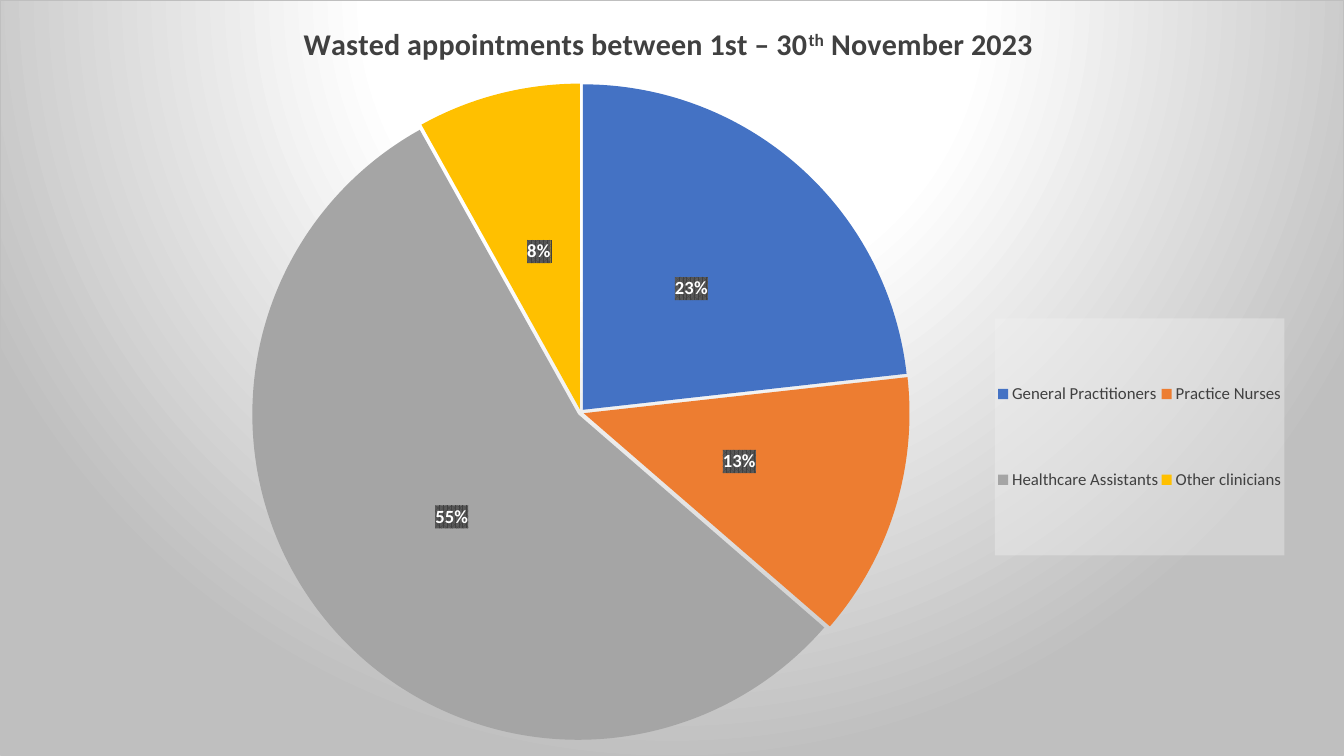
from typing import NamedTuple

from lxml import etree
from pptx import Presentation
from pptx import util as u
from pptx.chart.data import CategoryChartData
from pptx.dml.color import RGBColor
from pptx.enum import chart as ch
from pptx.oxml import parse_xml
from pptx.oxml.ns import nsdecls

FONT = "Calibri"
BLUE = RGBColor(0x44, 0x72, 0xC4)
ORANGE = RGBColor(0xED, 0x7D, 0x31)
GRAY = RGBColor(0xA5, 0xA5, 0xA5)
GOLD = RGBColor(0xFF, 0xC0, 0x00)
WHITE = RGBColor(0xFF, 0xFF, 0xFF)
BLACK = RGBColor(0x00, 0x00, 0x00)
DARK = RGBColor(0x40, 0x40, 0x40)
LABEL_STRIPE = RGBColor(0x59, 0x59, 0x59)
LEGEND_FILL = RGBColor(0xF2, 0xF2, 0xF2)
EDGE = RGBColor(0xBF, 0xBF, 0xBF)


class Staff(NamedTuple):
    group: str
    percent: int
    color: RGBColor


STAFF = [
    Staff("General Practitioners", 23, BLUE),
    Staff("Practice Nurses", 13, ORANGE),
    Staff("Healthcare Assistants", 55, GRAY),
    Staff("Other clinicians", 8, GOLD),
]


def set_font(font, *, size: float, color: RGBColor, bold: bool = False) -> None:
    font.name = FONT
    font.size = u.Pt(size)
    font.bold = bold
    font.color.rgb = color


def add_text(paragraph, content: str, *, raised: bool = False, **style) -> None:
    run = paragraph.add_run()
    run.text = content
    set_font(run.font, **style)
    if raised:
        run._r.get_or_add_rPr().set("baseline", "30000")


def chart_xml(tag: str, inner: str) -> etree.ElementBase:
    return parse_xml(f"<c:{tag} {nsdecls('c', 'a')}>{inner}</c:{tag}>")


def srgb(color: RGBColor, inner: str = "") -> str:
    return f'<a:srgbClr val="{color}">{inner}</a:srgbClr>'


def place(part, index: int, **percents: float) -> None:
    """Set a manual layout, in percent of the chart area."""
    for old in part.xpath("c:layout"):
        part.remove(old)
    modes = '<c:xMode val="edge"/><c:yMode val="edge"/>'
    values = "".join(f'<c:{key} val="{value / 100:.4f}"/>'
                     for key, value in percents.items())
    target = '<c:layoutTarget val="inner"/>' if part.tag.endswith("plotArea") else ""
    part.insert(index, chart_xml(
        "layout", f"<c:manualLayout>{target}{modes}{values}</c:manualLayout>"))


def paint(part, fill: str) -> None:
    """Put shape formatting just ahead of the part's text formatting."""
    part.xpath("c:txPr")[0].addprevious(chart_xml("spPr", fill))


def build_pie(slide, width: int, height: int):
    data = CategoryChartData(number_format='0"%"')
    data.categories = [staff.group for staff in STAFF]
    data.add_series("Series 1", [staff.percent for staff in STAFF])
    chart = slide.shapes.add_chart(
        ch.XL_CHART_TYPE.PIE, 0, 0, width, height, data).chart
    set_font(chart.font, size=10, color=BLACK)
    root = chart.element

    # Chart area: light from above the slide
    stops = "".join(f'<a:gs pos="{pos}000">{srgb(color)}</a:gs>'
                    for pos, color in ((0, WHITE), (39, WHITE), (100, EDGE)))
    paint(root, f'<a:gradFill><a:gsLst>{stops}</a:gsLst><a:path path="circle">'
                '<a:fillToRect l="50000" t="-80000" r="50000" b="180000"/>'
                f'</a:path></a:gradFill><a:ln w="{u.Pt(0.75)}">'
                f'<a:solidFill>{srgb(EDGE)}</a:solidFill></a:ln>')

    # Slices
    plot = chart.plots[0]
    plot.vary_by_categories = True
    slices = plot.series[0]
    for index, staff in enumerate(STAFF):
        fill = slices.points[index].format.fill
        fill.solid()
        fill.fore_color.rgb = staff.color
    root.xpath(".//c:ser/c:tx")[0].addnext(
        parse_xml(f'<c:explosion {nsdecls("c")} val="1"/>'))
    place(root.xpath(".//c:plotArea")[0], 0, x=18.7, y=11, w=49, h=87.1)

    # Percent labels
    labels = slices.data_labels
    set_font(labels.font, size=13.3, color=WHITE, bold=True)
    labels.number_format = '0"%"'
    labels.number_format_is_linked = False
    labels.show_value = True
    labels.position = ch.XL_LABEL_POSITION.CENTER
    paint(root.xpath(".//c:ser/c:dLbls")[0],
          f'<a:pattFill prst="pct75"><a:fgClr>{srgb(DARK)}</a:fgClr>'
          f'<a:bgClr>{srgb(LABEL_STRIPE)}</a:bgClr></a:pattFill>')
    return chart


def add_heading(chart) -> None:
    chart.has_title = True
    heading = chart.chart_title.text_frame.paragraphs[0]
    style = dict(size=21.5, color=DARK, bold=True)
    add_text(heading, "Wasted appointments between 1st – 30", **style)
    add_text(heading, "th", raised=True, **style)
    add_text(heading, " November 2023", **style)
    place(chart.element.xpath(".//c:title")[0], 1, x=22.35, y=2.7)


def add_legend(chart) -> None:
    chart.has_legend = True
    chart.legend.position = ch.XL_LEGEND_POSITION.RIGHT
    chart.legend.include_in_layout = False
    set_font(chart.legend.font, size=12, color=DARK)
    legend = chart.element.xpath(".//c:legend")[0]
    place(legend, 1, x=74.05, y=42.1, w=21.55, h=31.4)
    tint = srgb(LEGEND_FILL, '<a:alpha val="39000"/>')
    paint(legend, f"<a:solidFill>{tint}</a:solidFill>")


def main() -> None:
    deck = Presentation()
    deck.slide_width = u.Inches(13.33)
    deck.slide_height = u.Inches(7.5)
    slide = deck.slides.add_slide(deck.slide_layouts[6])
    chart = build_pie(slide, deck.slide_width, deck.slide_height)
    add_heading(chart)
    add_legend(chart)
    deck.save("out.pptx")


if __name__ == "__main__":
    main()
